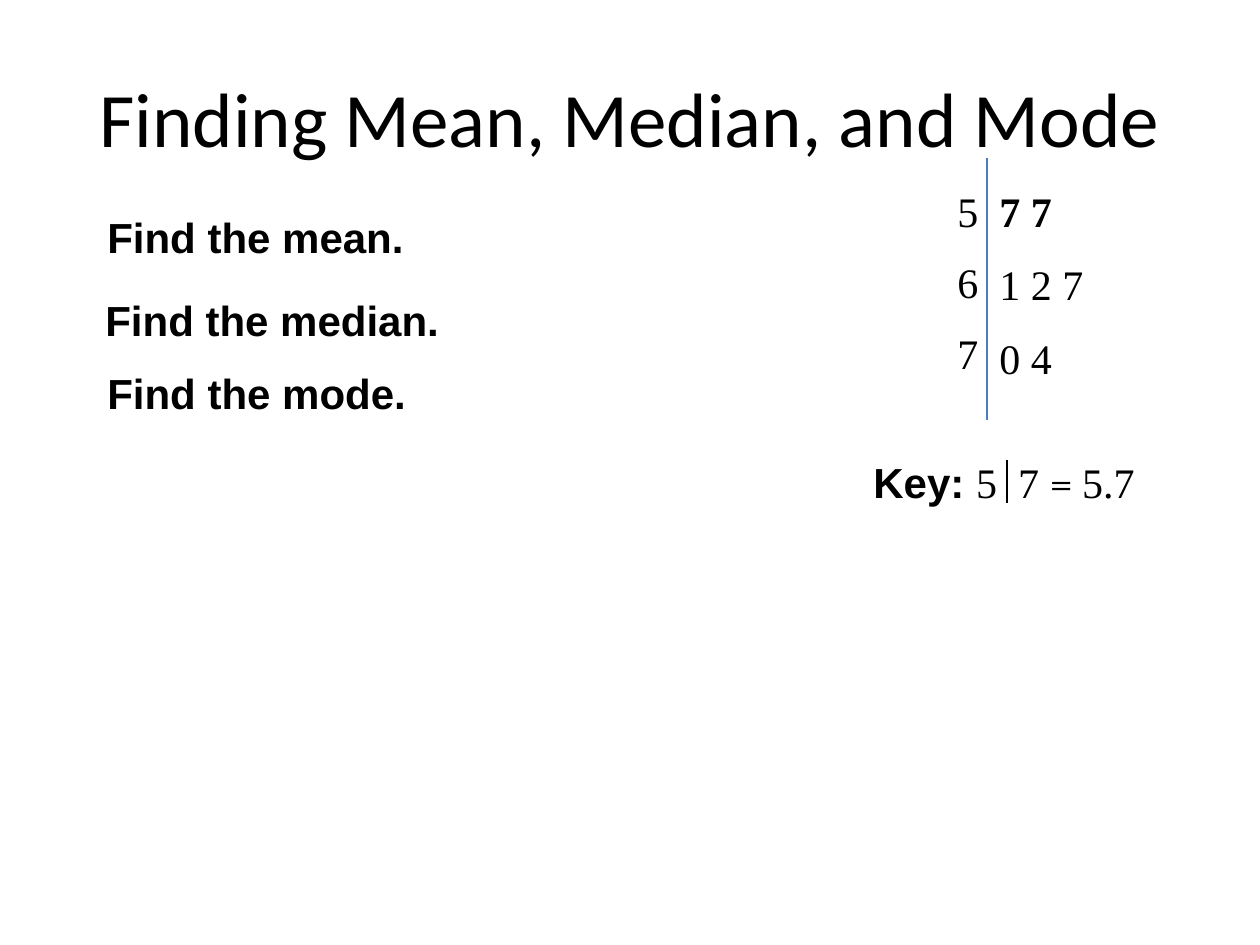
from pptx import Presentation
from pptx.dml.color import RGBColor as RGB
from pptx.enum.shapes import MSO_CONNECTOR as CONN
from pptx.enum.text import MSO_ANCHOR as ANCHOR, MSO_AUTO_SIZE as FIT, PP_ALIGN as ALIGN
from pptx.oxml.ns import qn
from pptx.util import Pt
from lxml import etree

SCALE = 914400 / 126
INK = {"text": "000000", "stem": "4B7EBC"}
SANS, SERIF = "Arial", "Times New Roman"


def write(box, paras, size=24):
    """Fill a shape with paragraphs, each a list of (text, font, bold) runs."""
    frame = box.text_frame
    for i, runs in enumerate(paras):
        para = frame.add_paragraph() if i else frame.paragraphs[0]
        if i:
            para.space_before = Pt(12)
        for text, face, bold in runs:
            run = para.add_run()
            run.text = text
            font = run.font
            font.name, font.size, font.bold = face, Pt(size), bold
            font.color.rgb = RGB.from_string(INK["text"])


def px(*nums):
    return [round(n * SCALE) for n in nums]


prs = Presentation()
prs.slide_width, prs.slide_height = px(1260, 945)
slide = prs.slides.add_slide(prs.slide_layouts[5])
shapes = slide.shapes

title = shapes.title
title.left, title.top, title.width, title.height = px(63, 38, 1134, 157)
title.text_frame.vertical_anchor = ANCHOR.MIDDLE
write(title, [[("Finding Mean, Median, and Mode", "Calibri", False)]], 44)
title.text_frame.paragraphs[0].alignment = ALIGN.CENTER

# left, top, width, height, wrap, paragraphs
boxes = [
    (945, 179, 42, 290, True, [[(stem, SERIF, False)] for stem in "567"]),
    (987, 179, 84, 63, True, [[("7 7", SERIF, True)]]),
    (987, 252, 199, 63, True, [[("1 2 7", SERIF, False)]]),
    (987, 326, 126, 63, True, [[("0 4", SERIF, False)]]),
    (95, 205, 326, 63, False, [[("Find the mean.", SANS, True)]]),
    (93, 288, 363, 63, False, [[("Find the median.", SANS, True)]]),
    (95, 361, 328, 63, False, [[("Find the mode.", SANS, True)]]),
    (861, 450, 290, 63, False, [[
        ("Key: ", SANS, True), ("5  7 ", SERIF, False),
        ("= ", "Cambria", False), ("5.7", SERIF, False)]]),
]
for left, top, width, height, wrap, paras in boxes:
    box = shapes.add_textbox(*px(left, top, width, height))
    box.text_frame.word_wrap = wrap
    box.text_frame.auto_size = FIT.SHAPE_TO_FIT_TEXT
    write(box, paras)

# Upright bars of the plot and of its key
for x, top, end, ink in [(987, 158, 420, "stem"), (1007, 460, 503, "text")]:
    bar = shapes.add_connector(CONN.STRAIGHT, *px(x, top, x, end))
    bar.line.color.rgb = RGB.from_string(INK[ink])
    bar.line.width = Pt(0.75)
    etree.SubElement(bar._element.spPr, qn("a:effectLst"))

prs.save("out.pptx")
